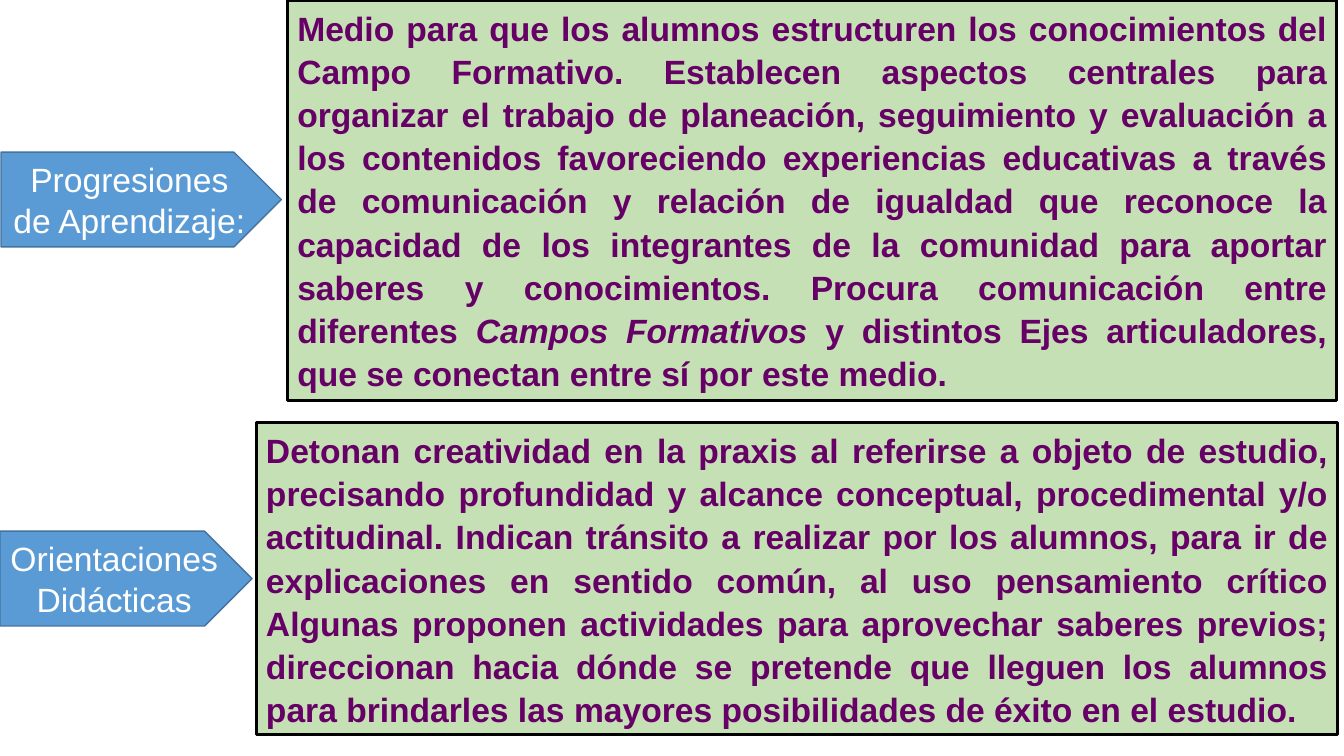
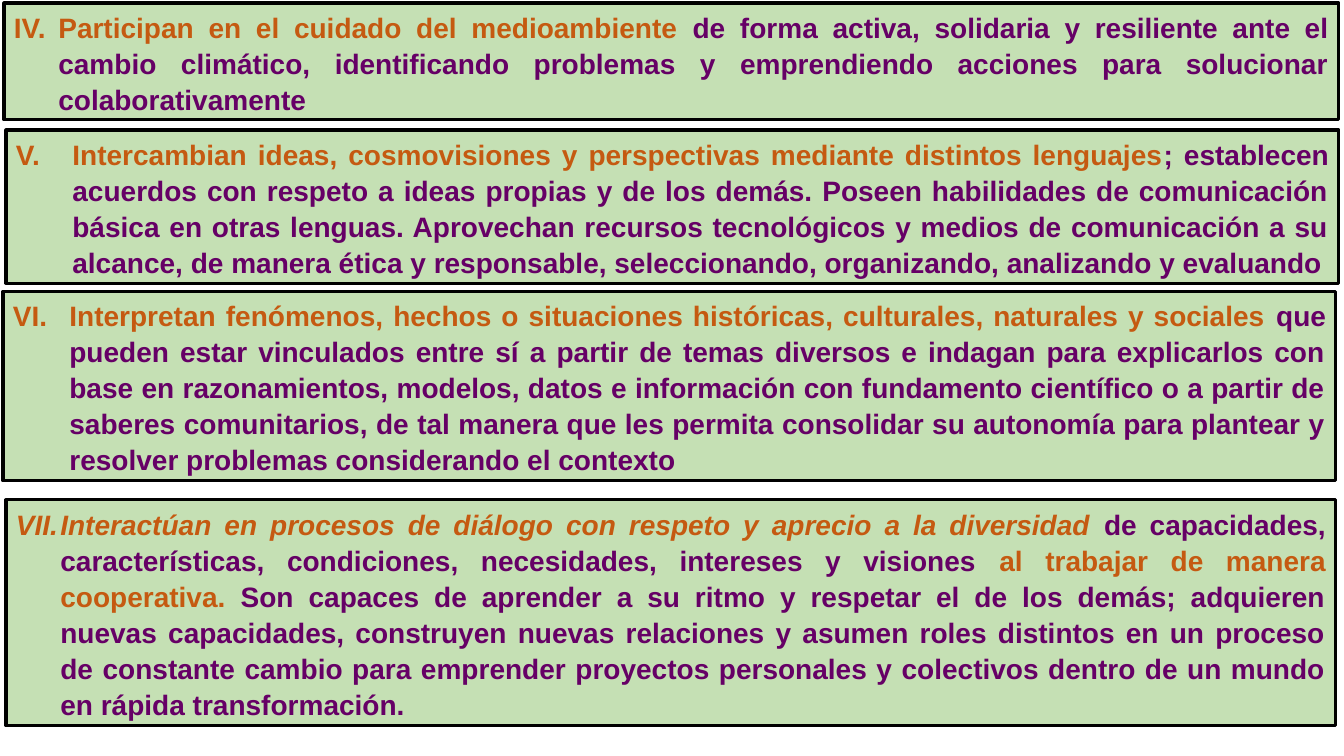
from lxml import etree
from pptx import Presentation
from pptx.dml.color import RGBColor
from pptx.enum import shapes, text
from pptx.oxml.ns import qn
from pptx.util import Inches, Pt

FONT = "Arial"
GREEN, BLACK = "C5E0B4", "000000"
BLUE, DARK_BLUE, WHITE = "5B9BD5", "43739E", "FFFFFF"
PURPLE, ORANGE = "660066", "C55A11"

# Each run is (text, colour, italic).
DEFINITIONS = [
    {
        "label": "Progresiones de Aprendizaje:",
        "arrow": (0.01, 1.51, 2.78, 0.94),
        "panel": (2.85, 0, 10.41, 3.97),
        "runs": [
            ("Medio para que los alumnos estructuren los conocimientos del Campo Formativo. "
             "Establecen aspectos centrales para organizar el trabajo de planeación, seguimiento "
             "y evaluación a los contenidos favoreciendo experiencias educativas a través de "
             "comunicación y relación de igualdad que reconoce la capacidad de los integrantes "
             "de la comunidad para aportar saberes y conocimientos. Procura comunicación entre "
             "diferentes ", PURPLE, False),
            ("Campos Formativos ", PURPLE, True),
            ("y distintos Ejes articuladores, que se conectan entre sí por este medio.",
             PURPLE, False),
        ],
    },
    {
        "label": "Orientaciones Didácticas",
        "arrow": (0, 5.27, 2.5, 0.94),
        "panel": (2.54, 4.19, 10.73, 3.1),
        "runs": [
            ("Detonan creatividad en la praxis al referirse a objeto de estudio, precisando "
             "profundidad y alcance conceptual, procedimental y/o actitudinal. Indican tránsito "
             "a realizar por los alumnos, para ir de explicaciones en sentido común, al uso "
             "pensamiento crítico Algunas proponen actividades para aprovechar saberes previos; "
             "direccionan hacia dónde se pretende que lleguen los alumnos para brindarles las "
             "mayores posibilidades de éxito en el estudio.", PURPLE, False),
        ],
    },
]

FIRST_TRAIT = 4
# Each trait is (box, hanging indent, runs).
TRAITS = [
    ((0.04, 0.03, 13.24, 1.16), 0.44, [
        ("Participan en el cuidado del medioambiente ", ORANGE, False),
        ("de forma activa, solidaria y resiliente ante el cambio climático, identificando "
         "problemas y emprendiendo acciones para solucionar colaborativamente", PURPLE, False),
    ]),
    ((0.06, 1.29, 13.22, 1.52), 0.56, [
        ("Intercambian ideas, cosmovisiones y perspectivas mediante distintos lenguajes",
         ORANGE, False),
        ("; establecen acuerdos con respeto a ideas propias y de los demás. Poseen habilidades "
         "de comunicación básica en otras lenguas. Aprovechan recursos tecnológicos y medios de "
         "comunicación a su alcance, de manera ética y responsable, seleccionando, organizando, "
         "analizando y evaluando", PURPLE, False),
    ]),
    ((0.03, 2.89, 13.22, 1.88), 0.56, [
        ("Interpretan fenómenos, hechos o situaciones históricas, culturales, naturales y "
         "sociales ", ORANGE, False),
        ("que pueden estar vinculados entre sí a partir de temas diversos e indagan para "
         "explicarlos con base en razonamientos, modelos, datos e información con fundamento "
         "científico o a partir de saberes comunitarios, de tal manera que les permita "
         "consolidar su autonomía para plantear y resolver problemas considerando el contexto",
         PURPLE, False),
    ]),
    ((0.06, 4.96, 13.19, 2.24), 0.44, [
        ("Interactúan en procesos de diálogo con respeto y aprecio a la diversidad ",
         ORANGE, True),
        ("de capacidades, características, condiciones, necesidades, intereses y visiones ",
         PURPLE, False),
        ("al trabajar de manera cooperativa.", ORANGE, False),
        (" Son capaces de aprender a su ritmo y respetar el de los demás; adquieren nuevas "
         "capacidades, construyen nuevas relaciones y asumen roles distintos en un proceso de "
         "constante cambio para emprender proyectos personales y colectivos dentro de un mundo "
         "en rápida transformación.", PURPLE, False),
    ]),
]


def color(hex_value):
    return RGBColor.from_string(hex_value)


def add_box(slide, kind, box, fill, line, line_width):
    shape = slide.shapes.add_shape(kind, *map(Inches, box))
    shape.shadow.inherit = False
    shape.fill.solid()
    shape.fill.fore_color.rgb = color(fill)
    shape.line.color.rgb = color(line)
    shape.line.width = Pt(line_width)
    shape.text_frame.word_wrap = True
    return shape


def add_run(paragraph, content, size, hex_value, bold=False, italic=False):
    run = paragraph.add_run()
    run.text = content
    font = run.font
    font.name, font.size, font.bold, font.italic = FONT, Pt(size), bold, italic
    font.color.rgb = color(hex_value)


def number_paragraph(paragraph, start, indent):
    """Give the paragraph a Roman numeral and a hanging indent."""
    properties = paragraph._p.get_or_add_pPr()
    properties.set("marL", str(Inches(indent)))
    properties.set("indent", str(-Inches(indent)))
    etree.SubElement(properties, qn("a:buFont"), typeface=FONT)
    etree.SubElement(properties, qn("a:buAutoNum"), type="romanUcPeriod", startAt=str(start))


def add_panel(slide, box, runs, size):
    """Add a green panel of justified bold text and return its paragraph."""
    panel = add_box(slide, shapes.MSO_SHAPE.RECTANGLE, box, GREEN, BLACK, 2.25)
    frame = panel.text_frame
    frame.auto_size = text.MSO_AUTO_SIZE.SHAPE_TO_FIT_TEXT
    frame.vertical_anchor = text.MSO_ANCHOR.TOP
    paragraph = frame.paragraphs[0]
    paragraph.alignment = text.PP_ALIGN.JUSTIFY
    paragraph.line_spacing = 1.07
    for content, hex_value, italic in runs:
        add_run(paragraph, content, size, hex_value, True, italic)
    return paragraph


def add_label_arrow(slide, box, label):
    arrow = add_box(slide, shapes.MSO_SHAPE.PENTAGON, box, BLUE, DARK_BLUE, 1)
    arrow.text_frame.vertical_anchor = text.MSO_ANCHOR.MIDDLE
    paragraph = arrow.text_frame.paragraphs[0]
    paragraph.alignment = text.PP_ALIGN.CENTER
    add_run(paragraph, label, 24, WHITE)


def build_definitions(slide):
    for definition in DEFINITIONS:
        add_panel(slide, definition["panel"], definition["runs"], 24)
        add_label_arrow(slide, definition["arrow"], definition["label"])


def build_traits(slide):
    for number, (box, indent, runs) in enumerate(TRAITS, FIRST_TRAIT):
        number_paragraph(add_panel(slide, box, runs, 20), number, indent)


def main():
    presentation = Presentation()
    presentation.slide_width = Inches(13.33)
    presentation.slide_height = Inches(7.5)
    blank = presentation.slide_layouts[6]
    for build in (build_definitions, build_traits):
        build(presentation.slides.add_slide(blank))
    presentation.save("out.pptx")


if __name__ == "__main__":
    main()
